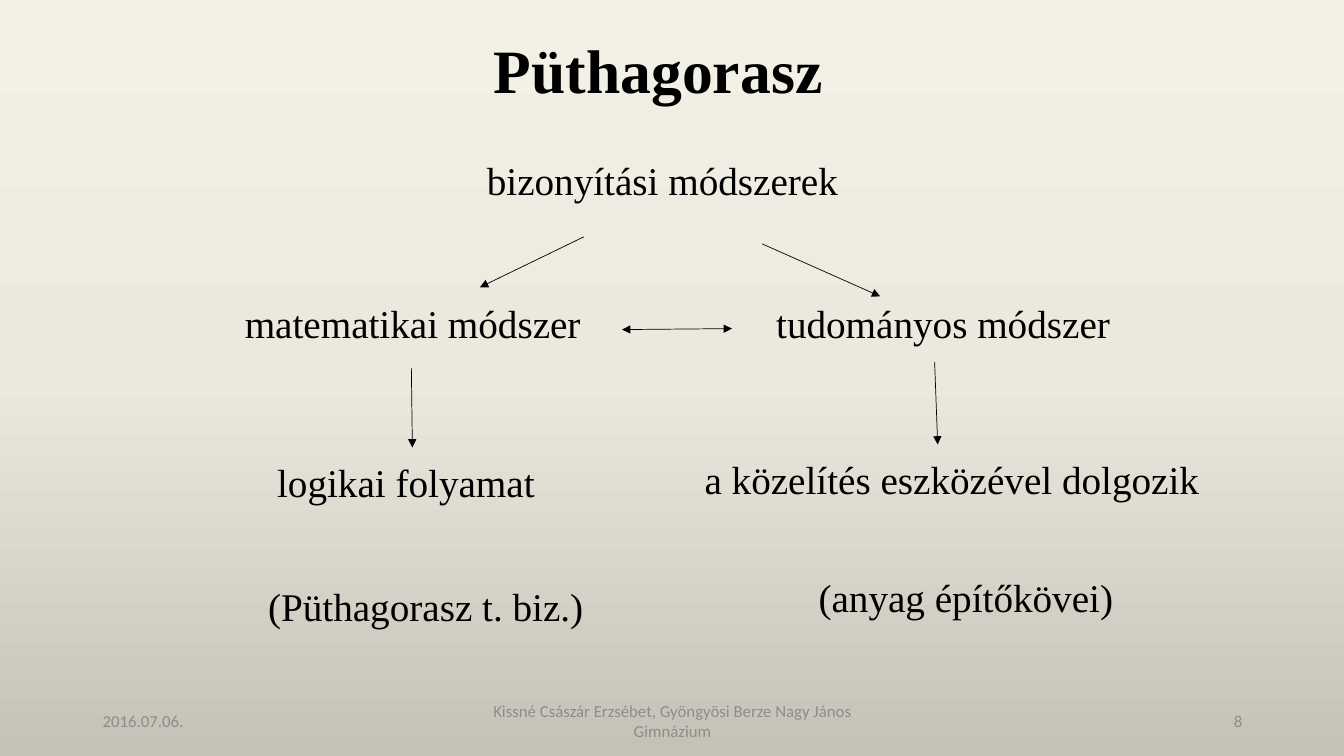
"""Build the slide on the two methods of proof."""
import copy

import pptx
import pptx.dml.color
import pptx.enum.shapes
import pptx.enum.text
import pptx.oxml
import pptx.oxml.ns
import pptx.util
from pptx.util import Inches

COLORS = {"ink": "000000", "note": "8C8C8C",
          "top": "F3F1E5", "mid": "EBE9DE", "base": "C4C2B7"}
ALIGN = pptx.enum.text.PP_ALIGN
ANCHOR = pptx.enum.text.MSO_ANCHOR
SERIF = "Times New Roman"


def get_rgb(name):
    """Return the named colour."""
    return pptx.dml.color.RGBColor.from_string(COLORS[name])


def paint_back(slide):
    """Fill the background with a vertical gradient of three stops."""
    fill = slide.background.fill
    fill.gradient()
    fill.gradient_angle = 270
    stops = slide.element.find(".//" + pptx.oxml.ns.qn("a:gsLst"))
    stops.insert(1, copy.deepcopy(stops[0]))
    for stop, name, place in zip(fill.gradient_stops, ("top", "mid", "base"), (0, 0.5, 1)):
        stop.color.rgb = get_rgb(name)
        stop.position = place


def add_text(slide, text, left, top, width, height=0.57, size=28, face=SERIF,
             color="ink", bold=False, align=ALIGN.LEFT, anchor=ANCHOR.TOP):
    """Add a text box with one paragraph."""
    box = slide.shapes.add_textbox(*map(Inches, (left, top, width, height)))
    frame = box.text_frame
    frame.word_wrap = True
    frame.vertical_anchor = anchor
    para = frame.paragraphs[0]
    para.text = text
    para.alignment = align
    font = para.font
    font.name, font.size, font.bold = face, pptx.util.Pt(size), bold
    font.color.rgb = get_rgb(color)
    return para


def add_foot(slide, text, left, width, align):
    """Add a small grey text at the foot of the slide."""
    add_text(slide, text, left, 6.95, width, 0.4, 12, "Calibri", "note",
             align=align, anchor=ANCHOR.MIDDLE)


def add_arrow(slide, start, end, both=False):
    """Add a thin arrow, with a head at both ends if asked."""
    kind = pptx.enum.shapes.MSO_CONNECTOR.STRAIGHT
    arrow = slide.shapes.add_connector(kind, *map(Inches, start + end))
    arrow.line.width = pptx.util.Pt(0.5)
    arrow.line.color.rgb = get_rgb("ink")
    line = arrow.line._get_or_add_ln()
    for tag in ("headEnd", "tailEnd") if both else ("tailEnd",):
        tip = pptx.oxml.parse_xml(f"<a:{tag} {pptx.oxml.ns.nsdecls('a')} type='triangle'/>")
        line.append(tip)
    flat = pptx.oxml.parse_xml(f"<a:effectLst {pptx.oxml.ns.nsdecls('a')}/>")
    line.addnext(flat)


def main():
    """Build and save the deck."""
    deck = pptx.Presentation()
    deck.slide_width, deck.slide_height = Inches(13.33), Inches(7.5)
    slide = deck.slides.add_slide(deck.slide_layouts[6])
    paint_back(slide)

    title = add_text(slide, "Püthagorasz", 0.78, 0, 11.5, 1.45, 44, bold=True,
                     align=ALIGN.CENTER, anchor=ANCHOR.MIDDLE)
    title.line_spacing = 0.9

    for text, left, top, width in (
        ("bizonyítási módszerek", 4.73, 1.5, 5.18),
        ("matematikai módszer", 2.33, 2.92, 3.8),
        ("tudományos módszer", 7.6, 2.92, 4),
        ("logikai folyamat", 2.65, 4.5, 4),
        ("a közelítés eszközével dolgozik", 6.89, 4.47, 5.53),
        ("(Püthagorasz t. biz.)", 2.56, 5.73, 4.35),
        ("(anyag építőkövei)", 8.02, 5.64, 4.85),
    ):
        add_text(slide, text, left, top, width)

    add_arrow(slide, (6.17, 3.27), (7.26, 3.26), both=True)
    for start, end in (
        ((5.79, 2.35), (4.76, 2.85)),
        ((7.56, 2.42), (8.73, 2.94)),
        ((4.08, 3.65), (4.09, 4.44)),
        ((9.27, 3.59), (9.3, 4.41)),
    ):
        add_arrow(slide, start, end)

    add_foot(slide, "2016.07.06.", 0.92, 3, ALIGN.LEFT)
    add_foot(slide, "Kissné Császár Erzsébet, Gyöngyösi Berze Nagy János Gimnázium",
             4.42, 4.5, ALIGN.CENTER)
    add_foot(slide, "8", 9.42, 3, ALIGN.RIGHT)
    deck.save("out.pptx")


if __name__ == "__main__":
    main()
